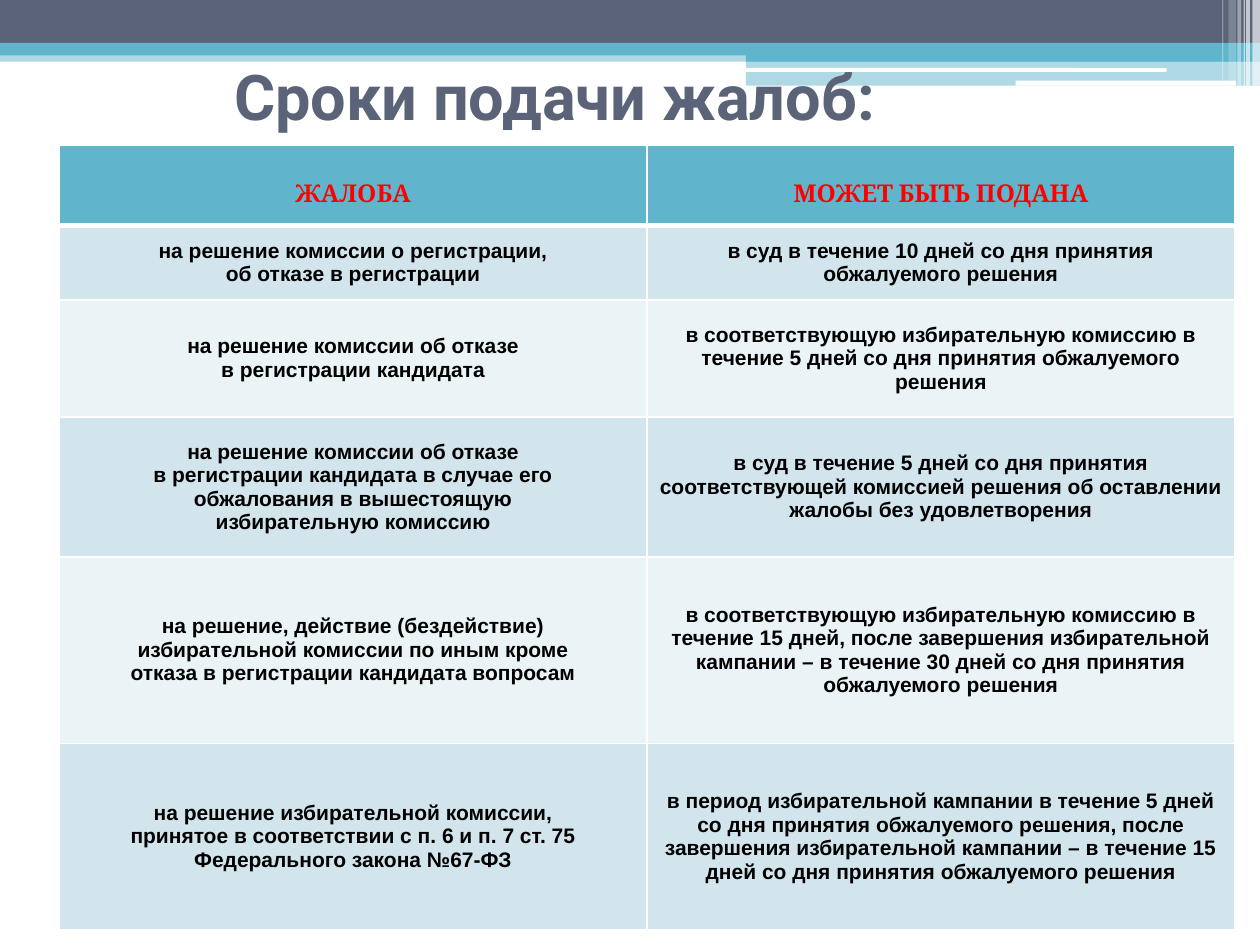
from copy import deepcopy

from pptx import Presentation
from pptx.dml.color import RGBColor
from pptx.enum.shapes import MSO_SHAPE
from pptx.enum.text import MSO_ANCHOR, PP_ALIGN
from pptx.oxml.ns import qn
from pptx.util import Inches, Pt
from lxml import etree

RECT, ROUNDED = MSO_SHAPE.RECTANGLE, MSO_SHAPE.ROUNDED_RECTANGLE
CENTER = PP_ALIGN.CENTER
TOP, MIDDLE = MSO_ANCHOR.TOP, MSO_ANCHOR.MIDDLE

SLATE, TEAL, WHITE = "5A6378", "60B5CC", "FFFFFF"
BAND_COLORS = ("D2E5EC", "EAF3F6")

TITLE_FONT = {"name": "Roboto", "size": Pt(36), "bold": True, "color": SLATE}
HEADER_FONT = {"name": "Cambria", "size": Pt(14), "bold": True, "color": "FF0000"}
BODY_FONT = {"name": "Arial", "size": Pt(12), "bold": True, "color": "000000"}

# left, top, width, height, colour, opacity in percent
BANNER_BARS = [
    (0, 0.4, 10, 0.09, TEAL, 50),
    (0, 0, 10, 0.34, SLATE, 100),
    (0, 0.34, 10, 0.1, TEAL, 100),
    (5.92, 0.39, 4.08, 0.1, TEAL, 100),
    (5.92, 0.48, 4.08, 0.2, TEAL, 50),
]
BANNER_LINES = [(5.91, 0.54, 3.35, 0.03), (8.06, 0.64, 1.75, 0.04)]
# left, width, height, opacity in percent
CORNER_STRIPES = [
    (9.94, 0.06, 0.68, 65),
    (9.89, 0.03, 0.68, 65),
    (9.87, 0.01, 0.68, 60),
    (9.82, 0.03, 0.68, 40),
    (9.75, 0.06, 0.64, 20),
    (9.7, 0.01, 0.64, 30),
]

ROW_HEIGHTS = (0.64, 0.59, 0.93, 1.11, 1.48, 1.48)
COMPLAINTS = [
    ("ЖАЛОБА", "МОЖЕТ БЫТЬ ПОДАНА"),
    ("на решение комиссии о регистрации,\nоб отказе в регистрации",
     "в суд в течение 10 дней со дня принятия\nобжалуемого решения"),
    ("на решение комиссии об отказе\nв регистрации кандидата",
     "в соответствующую избирательную комиссию в течение 5 дней "
     "со дня принятия обжалуемого решения"),
    ("на решение комиссии об отказе\nв регистрации кандидата в случае его\n"
     "обжалования в вышестоящую\nизбирательную комиссию",
     "в суд в течение 5 дней со дня принятия соответствующей комиссией "
     "решения об оставлении жалобы без удовлетворения"),
    ("на решение, действие (бездействие)\nизбирательной комиссии по иным кроме\n"
     "отказа в регистрации кандидата вопросам",
     "в соответствующую избирательную комиссию в течение 15 дней, после "
     "завершения избирательной кампании – в течение 30 дней со дня принятия "
     "обжалуемого решения"),
    ("на решение избирательной комиссии,\nпринятое в соответствии с п. 6 и п. 7 ст. 75\n"
     "Федерального закона №67-ФЗ",
     "в период избирательной кампании в течение 5 дней со дня принятия "
     "обжалуемого решения, после завершения избирательной кампании – "
     "в течение 15 дней со дня принятия обжалуемого решения"),
]


def paint(fill, color):
    fill.solid()
    fill.fore_color.rgb = RGBColor.from_string(color)


def add_bar(slide, left, top, width, height, color, opacity=100, preset=RECT):
    bar = slide.shapes.add_shape(
        preset, Inches(left), Inches(top), Inches(width), Inches(height))
    bar.shadow.inherit = False
    bar.line.fill.background()
    paint(bar.fill, color)
    if opacity < 100:
        tint = bar._element.spPr.find(qn("a:solidFill"))[0]
        etree.SubElement(tint, qn("a:alpha"), val=str(opacity * 1000))


def write(paragraph, text, font):
    paragraph.text = text
    for run in paragraph.runs:
        for name, value in font.items():
            if name == "color":
                run.font.color.rgb = RGBColor.from_string(value)
            else:
                setattr(run.font, name, value)
    # Line breaks take the size of the text around them
    for line_break in paragraph._p.findall(qn("a:br")):
        line_break.append(deepcopy(paragraph.runs[0]._r.rPr))


def set_borders(cell, widths):
    properties = cell._tc.get_or_add_tcPr()
    for side, width in widths.items():
        line = etree.SubElement(properties, qn(f"a:ln{side}"), w=str(Pt(width)))
        fill = etree.SubElement(line, qn("a:solidFill"))
        etree.SubElement(fill, qn("a:srgbClr"), val=WHITE)


def add_banner(slide):
    for bar in BANNER_BARS:
        add_bar(slide, *bar)
    for line in BANNER_LINES:
        add_bar(slide, *line, WHITE, preset=ROUNDED)
    for left, width, height, opacity in CORNER_STRIPES:
        add_bar(slide, left, 0, width, height, WHITE, opacity)


def add_deadlines(slide):
    frame = slide.shapes.add_table(
        len(COMPLAINTS), 2, Inches(0.47), Inches(1.15),
        Inches(9.33), Inches(sum(ROW_HEIGHTS)))
    deadlines = frame.table
    for row, (height, texts) in enumerate(zip(ROW_HEIGHTS, COMPLAINTS)):
        deadlines.rows[row].height = Inches(height)
        header = row == 0
        borders = {"L": 1, "R": 1, "T": 3 if row == 1 else 1, "B": 3 if header else 1}
        for column, text in enumerate(texts):
            cell = deadlines.cell(row, column)
            set_borders(cell, borders)
            paint(cell.fill, TEAL if header else BAND_COLORS[(row - 1) % 2])
            cell.vertical_anchor = TOP if header else MIDDLE
            if header:
                cell.margin_top = Inches(0.28)
            paragraph = cell.text_frame.paragraphs[0]
            paragraph.alignment = CENTER
            write(paragraph, text, HEADER_FONT if header else BODY_FONT)


def add_title(slide, text):
    title = slide.shapes.add_textbox(
        Inches(1.76), Inches(0.36), Inches(7.89), Inches(0.79)).text_frame
    title.word_wrap = True
    title.vertical_anchor = MIDDLE
    write(title.paragraphs[0], text, TITLE_FONT)


def main():
    presentation = Presentation()
    presentation.slide_width, presentation.slide_height = Inches(10), Inches(7.5)
    slide = presentation.slides.add_slide(presentation.slide_layouts[6])
    paint(slide.background.fill, WHITE)
    add_banner(slide)
    add_deadlines(slide)
    add_title(slide, "Сроки подачи жалоб:")
    presentation.save("out.pptx")


if __name__ == "__main__":
    main()
